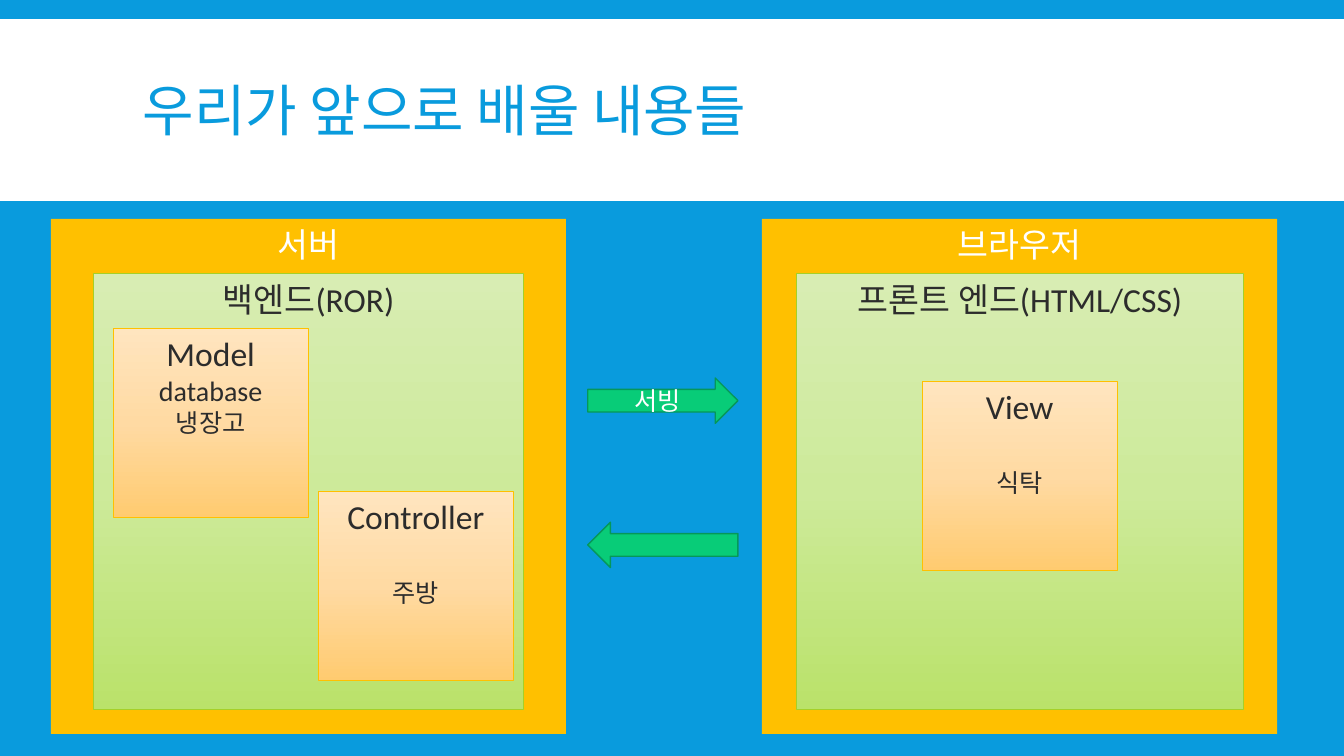
from copy import deepcopy
from dataclasses import dataclass

from pptx import Presentation
from pptx.dml.color import RGBColor
from pptx.enum.shapes import MSO_SHAPE
from pptx.enum.text import MSO_ANCHOR, PP_ALIGN
from pptx.oxml.ns import qn
from pptx.shapes.autoshape import Shape
from pptx.slide import Slide
from pptx.util import Pt

BLUE = RGBColor(0x09, 0x9B, 0xDD)
WHITE = RGBColor(0xFF, 0xFF, 0xFF)
DARK = RGBColor(0x2C, 0x2C, 0x2C)
AMBER = RGBColor(0xFF, 0xC0, 0x00)
GREEN = RGBColor(0x08, 0xCC, 0x78)
GREEN_EDGE = RGBColor(0x06, 0x97, 0x59)
LIME_EDGE = RGBColor(0xA5, 0xD0, 0x28)
LIME_FADE = (RGBColor(0xD8, 0xED, 0xB3), RGBColor(0xCD, 0xEA, 0x9A), RGBColor(0xBA, 0xE2, 0x6A))
PEACH_FADE = (RGBColor(0xFF, 0xE5, 0xBF), RGBColor(0xFF, 0xDA, 0xA3), RGBColor(0xFF, 0xCB, 0x70))
FONT = "Calibri"


@dataclass(frozen=True)
class Line:
    text: str
    size: float = 24
    space_before: float = 0


@dataclass(frozen=True)
class Style:
    fill: tuple[RGBColor, ...]
    ink: RGBColor = WHITE
    edge: RGBColor | None = None
    edge_width: float = 0.75
    kind: MSO_SHAPE = MSO_SHAPE.RECTANGLE
    anchor: MSO_ANCHOR = MSO_ANCHOR.TOP


@dataclass(frozen=True)
class Box:
    style: Style
    left: float
    top: float
    width: float
    height: float
    lines: tuple[Line, ...] = ()
    rotation: float = 0


BAND = Style((WHITE,))
MACHINE = Style((AMBER,))
LAYER = Style(LIME_FADE, DARK, LIME_EDGE)
PART = Style(PEACH_FADE, DARK, AMBER)
ARROW = Style((GREEN,), WHITE, GREEN_EDGE, 1, MSO_SHAPE.RIGHT_ARROW, MSO_ANCHOR.MIDDLE)


def machine(left: float, name: str) -> Box:
    return Box(MACHINE, left, 156.3, 368, 368, (Line(name),))


def layer(left: float, width: float, name: str) -> Box:
    return Box(LAYER, left, 195.3, width, 311.6, (Line(name),))


def part(left: float, top: float, *lines: Line) -> Box:
    return Box(PART, left, top, 139.3, 135.4, lines)


def arrow(top: float, rotation: float, *lines: Line) -> Box:
    return Box(ARROW, 419.8, top, 107.3, 32.4, lines, rotation)


BOXES = (
    Box(BAND, 0, 13.7, 960, 129.8),
    machine(36.3, "서버"),
    machine(544.3, "브라우저"),
    arrow(270, 0, Line("서빙", 18)),
    arrow(373, 180),
    layer(66.8, 307.2, "백엔드(ROR)"),
    layer(568.8, 319.7, "프론트 엔드(HTML/CSS)"),
    part(80.9, 234.4, Line("Model"), Line("database", 20), Line("냉장고", 18)),
    part(227.4, 350.9, Line("Controller"), Line("주방", 18, 29)),
    part(658.7, 272.3, Line("View"), Line("식탁", 18, 29)),
)


def paint(shape: Shape, colors: tuple[RGBColor, ...]) -> None:
    if len(colors) == 1:
        shape.fill.solid()
        shape.fill.fore_color.rgb = colors[0]
        return
    shape.fill.gradient()
    shape.fill.gradient_angle = 270
    stop_list = next(shape.element.iter(qn("a:gsLst")))
    stop_list.insert(1, deepcopy(stop_list[0]))
    for index, (stop, color) in enumerate(zip(shape.fill.gradient_stops, colors)):
        stop.position = index / (len(colors) - 1)
        stop.color.rgb = color


def write(shape: Shape, lines: tuple[Line, ...], ink: RGBColor,
          anchor: MSO_ANCHOR, alignment: PP_ALIGN) -> None:
    frame = shape.text_frame
    frame.word_wrap = True
    frame.vertical_anchor = anchor
    for index, line in enumerate(lines):
        paragraph = frame.add_paragraph() if index else frame.paragraphs[0]
        paragraph.text = line.text
        paragraph.alignment = alignment
        paragraph.space_before = Pt(line.space_before)
        paragraph.font.name = FONT
        paragraph.font.size = Pt(line.size)
        paragraph.font.color.rgb = ink


def draw_box(page: Slide, box: Box) -> None:
    style = box.style
    shape = page.shapes.add_shape(
        style.kind, Pt(box.left), Pt(box.top), Pt(box.width), Pt(box.height))
    shape.shadow.inherit = False
    shape.rotation = box.rotation
    paint(shape, style.fill)
    if style.edge is None:
        shape.line.fill.background()
    else:
        shape.line.color.rgb = style.edge
        shape.line.width = Pt(style.edge_width)
    write(shape, box.lines, style.ink, style.anchor, PP_ALIGN.CENTER)


def draw_title(page: Slide, text: str) -> None:
    title = page.shapes.add_textbox(Pt(95), Pt(22.3), Pt(770.4), Pt(118.8))
    write(title, (Line(text, 40),), BLUE, MSO_ANCHOR.MIDDLE, PP_ALIGN.LEFT)
    title.text_frame.paragraphs[0].line_spacing = 0.85


def main() -> None:
    deck = Presentation()
    deck.slide_width, deck.slide_height = Pt(960), Pt(540)
    page = deck.slides.add_slide(deck.slide_layouts[6])
    page.background.fill.solid()
    page.background.fill.fore_color.rgb = BLUE
    for box in BOXES:
        draw_box(page, box)
    draw_title(page, "우리가 앞으로 배울 내용들")
    deck.save("out.pptx")


if __name__ == "__main__":
    main()
